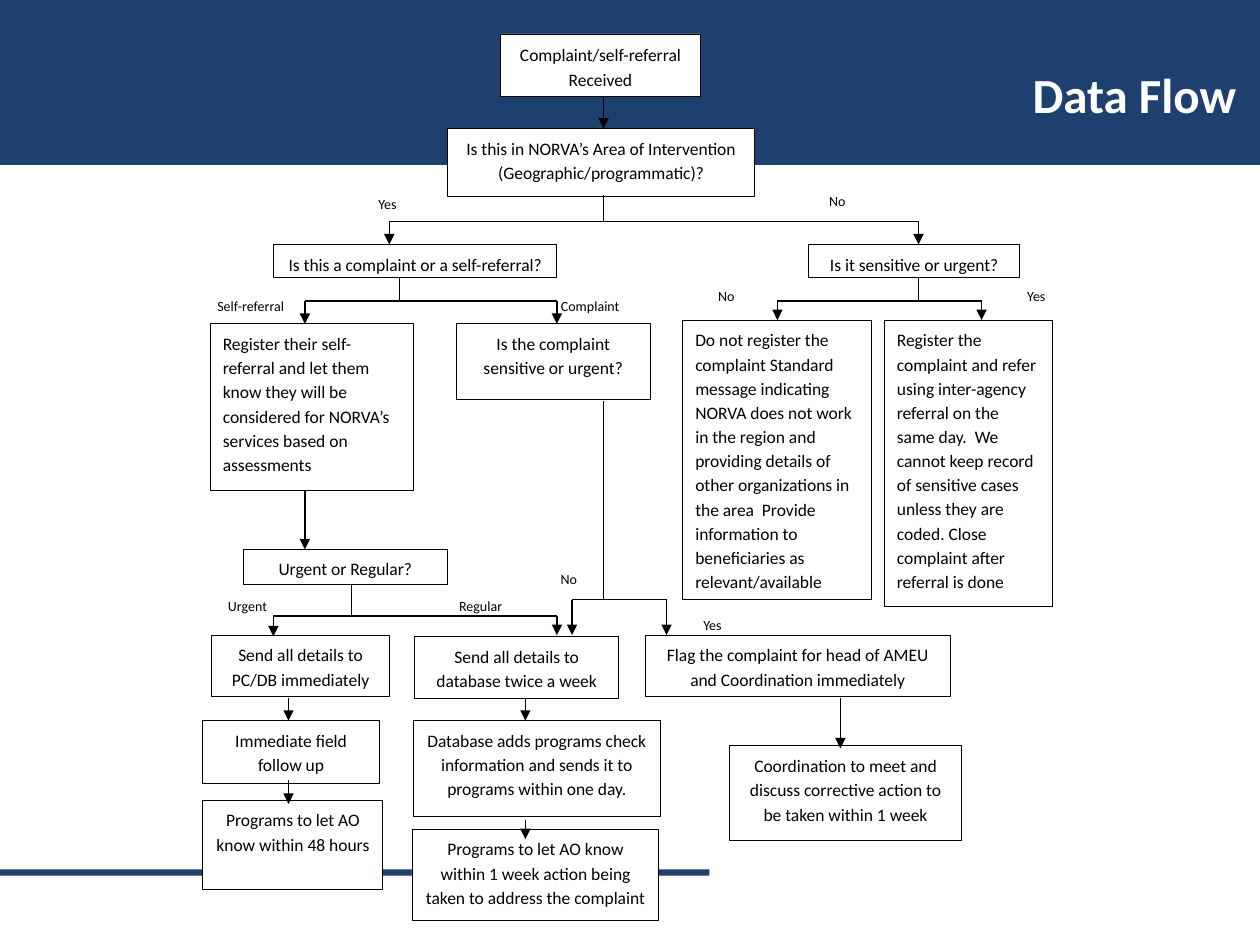
"""Build the data flow slide: a decision chart for complaints and self-referrals."""
from dataclasses import dataclass

from pptx import Presentation, util as u
from pptx.dml.color import RGBColor
from pptx.enum import shapes, text
from pptx.oxml.ns import qn
from lxml import etree

PX = 9144
CENTER, LEFT, RIGHT = text.PP_ALIGN.CENTER, text.PP_ALIGN.LEFT, text.PP_ALIGN.RIGHT
TOP, MIDDLE = text.MSO_ANCHOR.TOP, text.MSO_ANCHOR.MIDDLE


@dataclass(frozen=True)
class Theme:
    """Colours, type sizes and line widths of the slide."""
    navy: RGBColor = RGBColor(0x1E, 0x40, 0x6E)
    white: RGBColor = RGBColor(0xFF, 0xFF, 0xFF)
    black: RGBColor = RGBColor(0, 0, 0)
    font: str = "Calibri"
    title: int = 28
    body: int = 10
    label: int = 8
    outline: float = 0.5
    arrow: float = 0.75


THEME = Theme()

BANDS = [(0, 0, 1000, 131), (0, 690, 563, 5)]

BOXES = [
    (397, 27, 159, 50, "Complaint/self-referral Received", CENTER, MIDDLE),
    (355, 102, 244, 54, "Is this in NORVA’s Area of Intervention (Geographic/programmatic)?", CENTER, TOP),
    (217, 194, 225, 26, "Is this a complaint or a self-referral?", CENTER, TOP),
    (642, 194, 167, 26, "Is it sensitive or urgent?", CENTER, TOP),
    (167, 257, 161, 132, "Register their self-referral and let them know they will be considered "
     "for NORVA’s services based on assessments", LEFT, TOP),
    (362, 257, 154, 60, "Is the complaint sensitive or urgent?", CENTER, TOP),
    (542, 254, 150, 222, "Do not register the complaint Standard message indicating NORVA does not "
     "work in the region and providing details of other organizations in the area  Provide "
     "information to beneficiaries as relevant/available", LEFT, TOP),
    (702, 254, 133, 227, "Register the complaint and refer using inter-agency referral on the same "
     "day.  We cannot keep record of sensitive cases unless they are coded. Close complaint after "
     "referral is done", LEFT, TOP),
    (193, 436, 162, 28, "Urgent or Regular?", CENTER, MIDDLE),
    (168, 504, 141, 49, "Send all details to PC/DB immediately", CENTER, TOP),
    (329, 505, 162, 49, "Send all details to database twice a week", CENTER, TOP),
    (512, 504, 242, 49, "Flag the complaint for head of AMEU and Coordination immediately", CENTER, TOP),
    (161, 572, 140, 50, "Immediate field follow up", CENTER, TOP),
    (328, 572, 196, 76, "Database adds programs check information and sends it to programs within "
     "one day.", CENTER, TOP),
    (579, 592, 184, 75, "Coordination to meet and discuss corrective action to be taken within 1 "
     "week", CENTER, TOP),
    (161, 635, 143, 71, "Programs to let AO know within 48 hours", CENTER, TOP),
    (327, 658, 196, 73, "Programs to let AO know within 1 week action being taken to address the "
     "complaint", CENTER, TOP),
]

LABELS = [
    (285, 153, 45, "Yes"), (642, 151, 45, "No"),
    (155, 234, 88, "Self-referral"), (442, 234, 53, "Complaint"),
    (554, 226, 45, "No"), (800, 226, 45, "Yes"),
    (170, 472, 53, "Urgent"), (355, 472, 53, "Regular"),
    (429, 451, 45, "No"), (543, 487, 45, "Yes"),
]

FORKS = [
    (479, 155, 176, [(309, 194), (729, 194)]),
    (317, 220, 239, [(242, 257), (442, 257)]),
    (729, 220, 239, [(617, 254), (779, 254)]),
    (279, 464, 489, [(217, 505), (442, 504)]),
    (479, 318, 476, [(454, 504), (529, 504)]),
]

STEPS = [
    (479, 77, 102), (242, 390, 436), (229, 554, 572), (229, 619, 638),
    (417, 554, 572), (417, 651, 666), (667, 554, 594),
]


def set_all(target, values):
    """Set each named attribute of target."""
    for name, value in values.items():
        setattr(target, name, value)


def px(*lengths):
    """Turn px into EMU."""
    return [length * PX for length in lengths]


def write(shape, words, size, color, align, anchor=TOP, bold=False, spacing=1.15, after=10, margins=None):
    """Put one formatted paragraph into a shape."""
    frame = shape.text_frame
    set_all(frame, {"word_wrap": True, "auto_size": text.MSO_AUTO_SIZE.NONE, "vertical_anchor": anchor})
    set_all(frame, margins or {})
    paragraph = frame.paragraphs[0]
    paragraph.text = words
    set_all(paragraph, {"alignment": align, "line_spacing": spacing,
                        "space_before": u.Pt(0), "space_after": u.Pt(after)})
    set_all(paragraph.font, {"name": THEME.font, "size": u.Pt(size), "bold": bold})
    paragraph.font.color.rgb = color


def add_rectangle(slide, bounds, fill):
    """Add a plain filled rectangle."""
    shape = slide.shapes.add_shape(shapes.MSO_SHAPE.RECTANGLE, *px(*bounds))
    shape.shadow.inherit = False
    shape.fill.solid()
    shape.fill.fore_color.rgb = fill
    shape.line.fill.background()
    return shape


def add_master_band(slide, bounds):
    """Add a navy band to the slide master, behind everything."""
    band = add_rectangle(slide, bounds, THEME.navy)
    slide.slide_layout.slide_master.shapes._spTree.insert(2, band._element)


def add_title(slide, words):
    """Move and format the title placeholder."""
    title = slide.shapes.title
    set_all(title, dict(zip(("left", "top", "width", "height"), px(345, 46, 646, 57))))
    write(title, words, THEME.title, THEME.white, RIGHT, bold=True, spacing=1.0, after=0)


def add_box(slide, left, top, width, height, words, align, anchor):
    """Add an outlined step and return its connection sites by position."""
    box = add_rectangle(slide, (left, top, width, height), THEME.white)
    box.line.color.rgb = THEME.black
    box.line.width = u.Pt(THEME.outline)
    write(box, words, THEME.body, THEME.black, align, anchor)
    middle, center = left + width / 2, top + height / 2
    places = [(middle, top), (left, center), (middle, top + height), (left + width, center)]
    return {place: (box, index) for index, place in enumerate(places)}


def add_label(slide, left, top, width, words):
    """Add a small answer label beside a branch."""
    label = slide.shapes.add_textbox(*px(left, top, width, 17))
    margins = dict.fromkeys(("margin_left", "margin_top", "margin_right", "margin_bottom"), 0)
    write(label, words, THEME.label, THEME.black, CENTER, margins=margins)


def add_line(slide, sites, start, end, arrow=False):
    """Draw a straight connector, joined to any box site it meets."""
    line = slide.shapes.add_connector(shapes.MSO_CONNECTOR.STRAIGHT, *px(*start, *end))
    line.line.color.rgb = THEME.black
    line.line.width = u.Pt(THEME.arrow)
    if arrow:
        etree.SubElement(line.line._get_or_add_ln(), qn("a:tailEnd"), type="triangle")
    etree.SubElement(line._element.spPr, qn("a:effectLst"))
    for place, connect in ((start, line.begin_connect), (end, line.end_connect)):
        if place in sites:
            connect(*sites[place])


def add_fork(slide, sites, stem, top, bar, targets):
    """Draw a stem, a crossbar and an arrow down to each target."""
    add_line(slide, sites, (stem, top), (stem, bar))
    add_line(slide, sites, (targets[0][0], bar), (targets[-1][0], bar))
    for target in targets:
        add_line(slide, sites, (target[0], bar), target, arrow=True)


def main():
    """Build and save the slide."""
    presentation = Presentation()
    set_all(presentation, dict(zip(("slide_width", "slide_height"), px(1000, 750))))
    slide = presentation.slides.add_slide(presentation.slide_layouts[5])
    for bounds in BANDS:
        add_master_band(slide, bounds)
    add_title(slide, "Data Flow")
    sites = {}
    for box in BOXES:
        sites.update(add_box(slide, *box))
    for fork in FORKS:
        add_fork(slide, sites, *fork)
    for x, top, bottom in STEPS:
        add_line(slide, sites, (x, top), (x, bottom), arrow=True)
    for label in LABELS:
        add_label(slide, *label)
    presentation.save("out.pptx")


if __name__ == "__main__":
    main()
